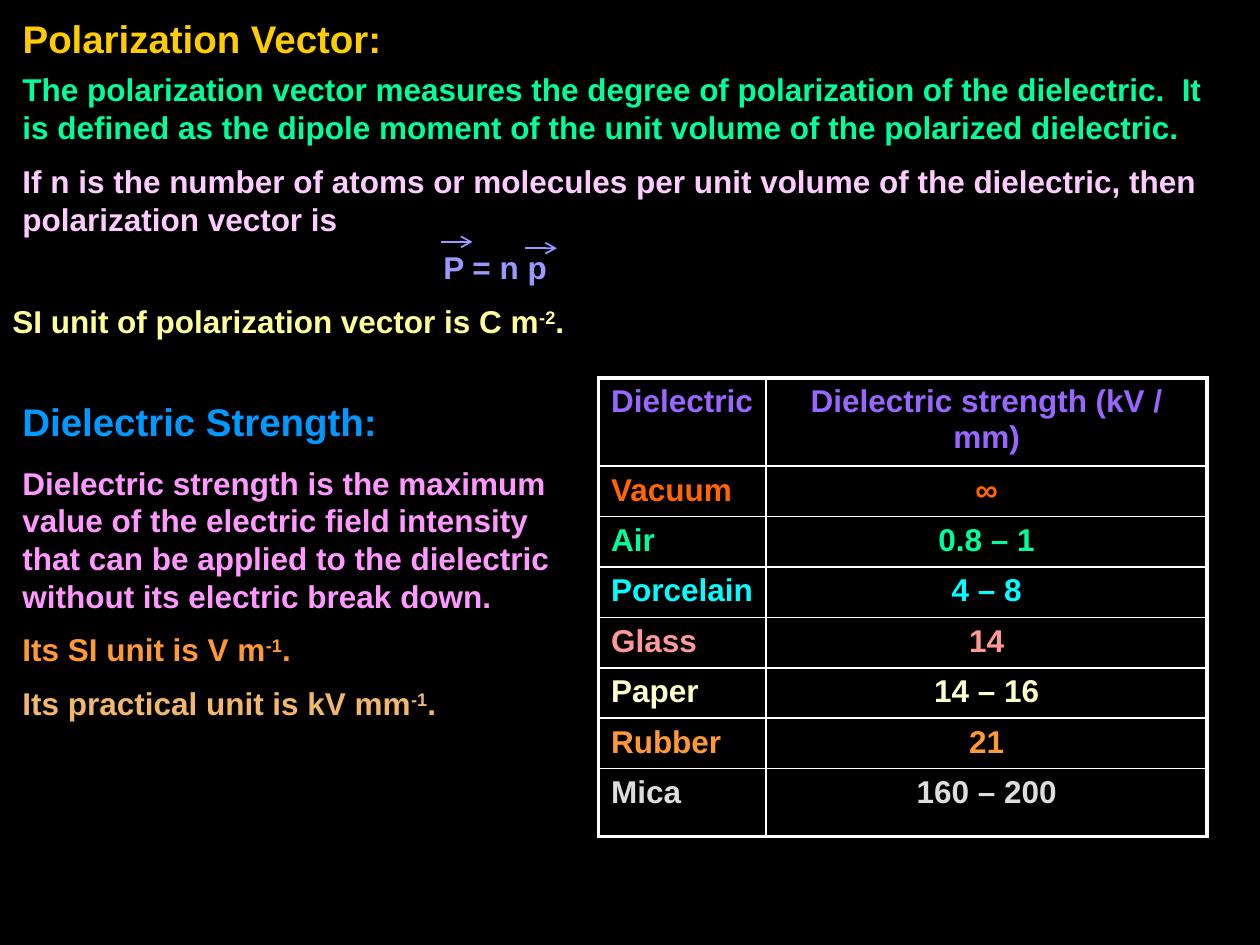
from lxml import etree
from pptx import Presentation
from pptx import util as u
from pptx.dml.color import RGBColor
from pptx.enum import shapes, text
from pptx.oxml.ns import qn

TITLE = ((0.08, 0.07, 3.17, 0.47), 22, [("FFCC00", "Polarization Vector:")])
BLOCKS = [
    ((0.08, 0.51, 9.75, 1.45), 18, [
        ("00FF99", "The polarization vector measures the degree of polarization of the "
                   "dielectric.  It is defined as the dipole moment of the unit volume of "
                   "the polarized dielectric."),
        ("FFCCFF", "If n is the number of atoms or molecules per unit volume of the "
                   "dielectric, then polarization vector is")]),
    ((0, 2.35, 4.92, 0.4), 18, [
        ("FFFF99", "SI unit of polarization vector is C m", "-2", ".")]),
    ((0.08, 3.11, 3.17, 0.47), 22, [("0099FF", "Dielectric Strength:")]),
    ((0.08, 3.63, 4.42, 2.2), 18, [
        ("FF99FF", "Dielectric strength is the maximum value of the electric field "
                   "intensity that can be applied to the dielectric without its electric "
                   "break down."),
        ("FF9933", "Its SI unit is V m", "-1", "."),
        ("F1B76C", "Its practical unit is kV mm", "-1", ".")]),
]
FORMULA = ((3.42, 1.92, 1.17, 0.4), 18, [("9999FF", "P = n p")])
VECTOR_ARROWS = [(3.5, 1.92), (4.17, 1.97)]
ARROW_LENGTH = 0.25

STRENGTHS = [
    ("9966FF", "Dielectric", "Dielectric strength (kV / mm)"),
    ("FF6600", "Vacuum", "∞"),
    ("00FF99", "Air", "0.8 – 1"),
    ("00FFFF", "Porcelain", "4 – 8"),
    ("FF9999", "Glass", "14"),
    ("FFFFCC", "Paper", "14 – 16"),
    ("FF9933", "Rubber", "21"),
    ("DDDDDD", "Mica", "160 – 200"),
]
COL_WIDTHS = [1.33, 3.5]
ROW_HEIGHTS = [0.7] + [0.4] * 6 + [0.54]


def rgb(value):
    return RGBColor.from_string(value)


def set_font(p, size, color):
    p.font.name = "Arial"
    p.font.size = u.Pt(size)
    p.font.bold = True
    p.font.color.rgb = rgb(color)


def fill_text(sp, size, paragraphs):
    tf = sp.text_frame
    tf.word_wrap = True
    tf.auto_size = text.MSO_AUTO_SIZE.NONE
    tf.vertical_anchor = text.MSO_ANCHOR.TOP
    for i, (color, *runs) in enumerate(paragraphs):
        p = tf.add_paragraph() if i else tf.paragraphs[0]
        p.alignment = text.PP_ALIGN.LEFT
        p.line_spacing = 1.0
        p.space_before = u.Pt(size / 2 if i else 0)
        set_font(p, size, color)
        for j, content in enumerate(runs):
            r = p.add_run()
            r.text = content
            if j == 1:
                r._r.get_or_add_rPr().set("baseline", "30000")


def add_text(parent, box, size, paragraphs):
    sp = parent.add_textbox(*map(u.Inches, box))
    fill_text(sp, size, paragraphs)


def add_arrow(parent, x, y, color):
    line = parent.add_connector(shapes.MSO_CONNECTOR.STRAIGHT, u.Inches(x), u.Inches(y),
                                u.Inches(x + ARROW_LENGTH), u.Inches(y))
    line.line.color.rgb = rgb(color)
    line.line.width = u.Pt(1)
    etree.SubElement(line.line._get_or_add_ln(), qn("a:tailEnd"), type="arrow")
    etree.SubElement(line._element.spPr, qn("a:effectLst"))


def set_borders(cell, widths):
    tcPr = cell._tc.get_or_add_tcPr()
    for side, width in widths.items():
        ln = etree.SubElement(tcPr, qn("a:ln" + side), w=str(u.Pt(width)))
        fill = etree.SubElement(ln, qn("a:solidFill"))
        etree.SubElement(fill, qn("a:srgbClr"), val="FFFFFF")


def add_strength_table(s):
    n_rows, n_cols = len(STRENGTHS), len(COL_WIDTHS)
    frame = s.shapes.add_table(n_rows, n_cols, u.Inches(4.75), u.Inches(3),
                               u.Inches(sum(COL_WIDTHS)), u.Inches(sum(ROW_HEIGHTS)))
    table = frame.table
    table.first_row = table.horz_banding = False
    for column, width in zip(table.columns, COL_WIDTHS):
        column.width = u.Inches(width)
    for row, height in zip(table.rows, ROW_HEIGHTS):
        row.height = u.Inches(height)
    for i, (color, *values) in enumerate(STRENGTHS):
        for j, value in enumerate(values):
            cell = table.cell(i, j)
            cell.text = value
            p = cell.text_frame.paragraphs[0]
            p.alignment = text.PP_ALIGN.CENTER if j else text.PP_ALIGN.LEFT
            set_font(p, 18, color)
            outer = {"L": j == 0, "R": j == n_cols - 1, "T": i == 0, "B": i == n_rows - 1}
            set_borders(cell, {side: 2.25 if edge else 1 for side, edge in outer.items()})
            cell.fill.background()


def main():
    prs = Presentation()
    prs.slide_width, prs.slide_height = u.Inches(10), u.Inches(7.5)
    s = prs.slides.add_slide(prs.slide_layouts[5])
    s.background.fill.solid()
    s.background.fill.fore_color.rgb = rgb("000000")

    box, size, paragraphs = TITLE
    title = s.shapes.title
    title.left, title.top, title.width, title.height = map(u.Inches, box)
    fill_text(title, size, paragraphs)

    for block in BLOCKS:
        add_text(s.shapes, *block)

    formula = s.shapes.add_group_shape().shapes
    add_text(formula, *FORMULA)
    for x, y in VECTOR_ARROWS:
        add_arrow(formula, x, y, "9999FF")

    add_strength_table(s)
    prs.save("out.pptx")


if __name__ == "__main__":
    main()
